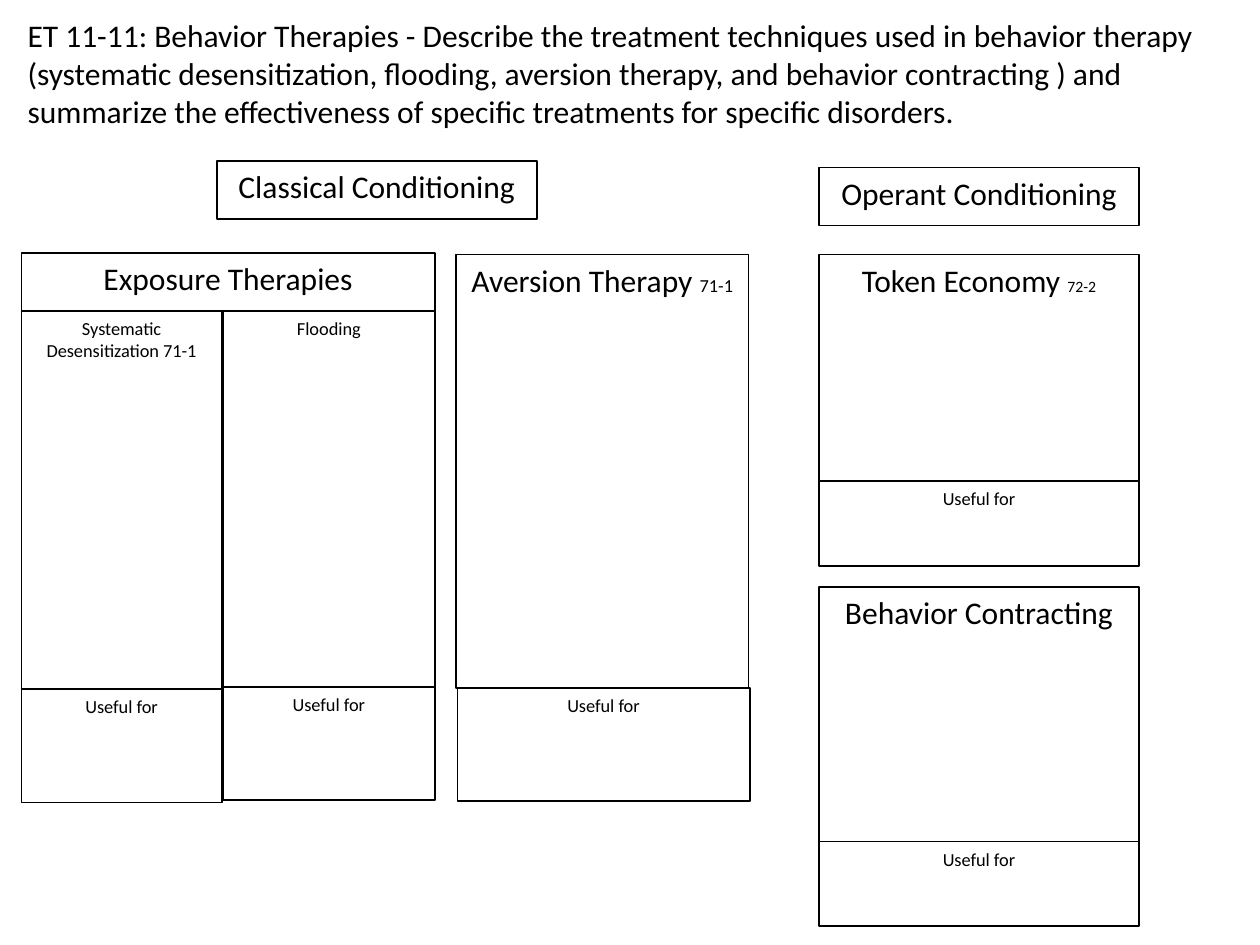
import pptx
import pptx.util
import pptx.dml.color
import pptx.enum.shapes
import pptx.enum.text

Inches = pptx.util.Inches


def colour(value):
    return pptx.dml.color.RGBColor.from_string(value)


def add_span(para, text, size):
    span = para.add_run()
    span.text = text
    span.font.name = "Calibri"
    span.font.size = pptx.util.Pt(size)
    span.font.color.rgb = colour("000000")


deck = pptx.Presentation()
deck.slide_width = Inches(10)
deck.slide_height = Inches(7.5)
page = deck.slides.add_slide(deck.slide_layouts[6])

title = page.shapes.add_textbox(Inches(0.12), Inches(0.08), Inches(9.88), Inches(1.01))
title.text_frame.word_wrap = True
title.text_frame.auto_size = pptx.enum.text.MSO_AUTO_SIZE.SHAPE_TO_FIT_TEXT
add_span(
    title.text_frame.paragraphs[0],
    "ET 11-11: Behavior Therapies - Describe the treatment techniques used in "
    "behavior therapy (systematic desensitization, flooding, aversion therapy, "
    "and behavior contracting ) and summarize the effectiveness of specific "
    "treatments for specific disorders.",
    18,
)

heading, small, tiny = 18, 10.5, 9
useful = [("Useful for", small)]
boxes = [
    (1.72, 1.28, 2.54, 0.46, [("Classical Conditioning", heading)]),
    (6.5, 1.33, 2.54, 0.46, [("Operant Conditioning", heading)]),
    (0.17, 2.01, 3.28, 0.46, [("Exposure Therapies", heading)]),
    (0.17, 2.47, 1.59, 3, [("Systematic Desensitization 71-1", small)]),
    (1.77, 2.47, 1.68, 3, [("Flooding", small)]),
    (3.62, 2.02, 2.32, 3.44, [("Aversion Therapy ", heading), ("71-1", small)]),
    (0.17, 5.47, 1.59, 0.9, useful),
    (1.77, 5.45, 1.68, 0.9, useful),
    (3.63, 5.46, 2.32, 0.9, useful),
    (6.5, 2.02, 2.54, 1.8, [("Token Economy ", heading), ("72-2", tiny)]),
    (6.5, 3.82, 2.54, 0.67, useful),
    (6.5, 4.66, 2.54, 2.18, [("Behavior Contracting", heading)]),
    (6.5, 6.68, 2.54, 0.67, useful),
]

for left, top, width, height, spans in boxes:
    box = page.shapes.add_shape(
        pptx.enum.shapes.MSO_SHAPE.RECTANGLE,
        Inches(left), Inches(top), Inches(width), Inches(height),
    )
    box.shadow.inherit = False
    box.fill.solid()
    box.fill.fore_color.rgb = colour("FFFFFF")
    box.line.color.rgb = colour("000000")
    box.line.width = pptx.util.Pt(1)
    box.text_frame.word_wrap = True
    box.text_frame.vertical_anchor = pptx.enum.text.MSO_ANCHOR.TOP
    para = box.text_frame.paragraphs[0]
    para.alignment = pptx.enum.text.PP_ALIGN.CENTER
    for text, size in spans:
        add_span(para, text, size)

deck.save("out.pptx")
